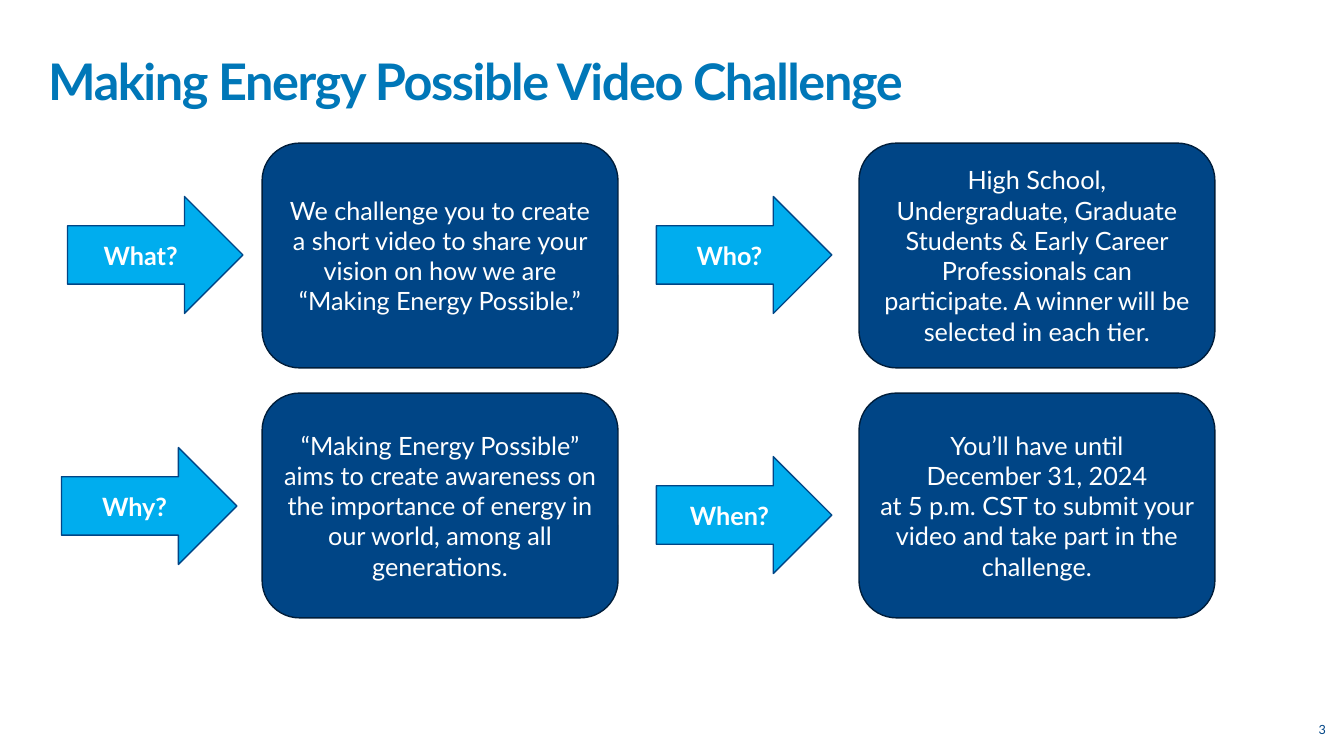
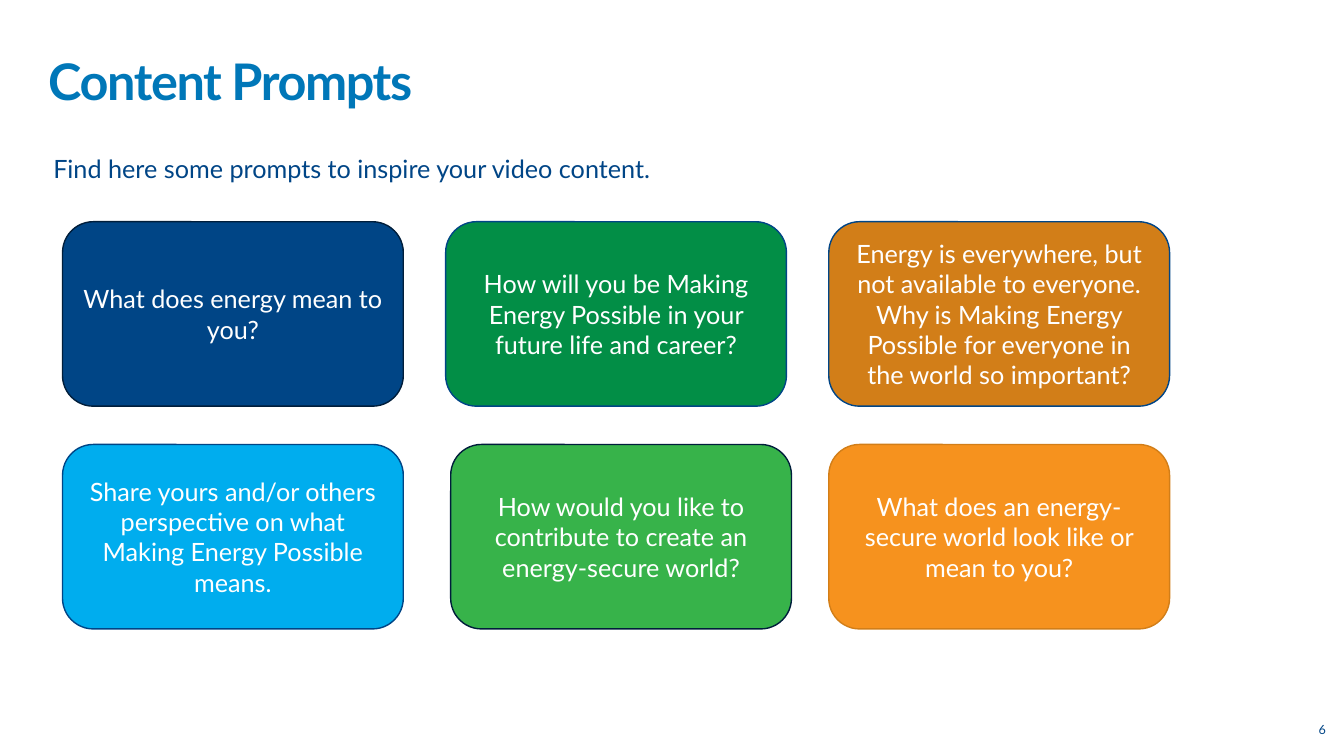
from dataclasses import dataclass

from pptx import Presentation
from pptx.dml.color import RGBColor
from pptx.enum.shapes import MSO_SHAPE
from pptx.enum.text import MSO_ANCHOR, PP_ALIGN
from pptx.slide import Slide
from pptx.text.text import TextFrame
from pptx.util import Emu, Pt

EMU_PER_PX = 9144  # 100 px to the inch
FONT = "Lato"
COLORS = {
    "white": "FFFFFF",
    "title": "0077B8",
    "navy": "004586",
    "midnight": "001E3B",
    "sky": "00ADEE",
    "forest": "028E46",
    "leaf": "37B34A",
    "amber": "D27E18",
    "orange": "F6921E",
}


@dataclass(frozen=True)
class Box:
    left: int
    top: int
    width: int
    height: int

    def emu(self) -> list[Emu]:
        return [Emu(v * EMU_PER_PX) for v in (self.left, self.top, self.width, self.height)]


@dataclass(frozen=True)
class TextStyle:
    size: int
    color: str
    bold: bool = False
    align: PP_ALIGN = PP_ALIGN.LEFT
    anchor: MSO_ANCHOR = MSO_ANCHOR.MIDDLE
    line_spacing: float = 1.0
    tracking: int = 0  # hundredths of a point


@dataclass(frozen=True)
class Question:
    """An arrow with a question word, and the card that answers it."""
    word: str
    answer: str
    arrow_left: int
    arrow_top: int
    card_left: int
    card_top: int


@dataclass(frozen=True)
class Prompt:
    text: str
    fill: str
    outline: str
    shift: int = 0


TITLE_BOX = Box(38, 41, 1217, 85)
NUMBER_BOX = Box(1278, 704, 47, 40)
INTRO_BOX = Box(43, 147, 812, 40)

TITLE_STYLE = TextStyle(36, "title", bold=True, line_spacing=0.9, tracking=-100)
NUMBER_STYLE = TextStyle(9, "navy", align=PP_ALIGN.RIGHT)
INTRO_STYLE = TextStyle(18, "navy", anchor=MSO_ANCHOR.TOP)
CARD_STYLE = TextStyle(18, "white", align=PP_ALIGN.CENTER)
ARROW_STYLE = TextStyle(18, "white", bold=True, align=PP_ALIGN.CENTER)

ARROW_SIZE = (174, 116)
ANSWER_SIZE = (353, 223)
PROMPT_SIZE = (338, 183)
PROMPT_ORIGIN = (62, 220)
PROMPT_PITCH = (380, 221)
PROMPT_COLUMNS = 3

QUESTIONS = [
    Question("What?", "We challenge you to create a short video to share your vision "
             "on how we are “Making Energy Possible.”", 67, 195, 260, 142),
    Question("Who?", "High School, Undergraduate, Graduate Students & Early Career "
             "Professionals can participate. A winner will be selected in each tier.",
             651, 195, 852, 142),
    Question("Why?", "“Making Energy Possible” aims to create awareness on the importance "
             "of energy in our world, among all generations.", 61, 444, 260, 390),
    Question("When?", "You’ll have until\nDecember 31, 2024\nat 5 p.m. CST to submit your "
             "video and take part in the challenge.", 651, 453, 852, 390),
]

PROMPTS = [
    Prompt("What does energy mean to you?", "navy", "midnight"),
    Prompt("How will you be Making Energy Possible in your future life and career?",
           "forest", "navy"),
    Prompt("Energy is everywhere, but not available to everyone. Why is Making Energy "
           "Possible for everyone in the world so important?", "amber", "navy"),
    Prompt("Share yours and/or others perspective on what Making Energy Possible means.",
           "sky", "navy"),
    Prompt("How would you like to contribute to create an energy-secure world?",
           "leaf", "midnight", shift=5),
    Prompt("What does an energy-secure world look like or mean to you?", "orange", "amber"),
]


def rgb(name: str) -> RGBColor:
    return RGBColor.from_string(COLORS[name])


def write(frame: TextFrame, text: str, style: TextStyle) -> None:
    frame.word_wrap = True
    frame.vertical_anchor = style.anchor
    paragraph = frame.paragraphs[0]
    paragraph.alignment = style.align
    paragraph.line_spacing = style.line_spacing
    for index, line in enumerate(text.split("\n")):
        if index:
            paragraph.add_line_break()
        run = paragraph.add_run()
        run.text = line
        run.font.name = FONT
        run.font.size = Pt(style.size)
        run.font.bold = style.bold
        run.font.color.rgb = rgb(style.color)
        if style.tracking:
            run.font._element.set("spc", str(style.tracking))


def add_label(slide: Slide, box: Box, text: str, style: TextStyle) -> None:
    write(slide.shapes.add_textbox(*box.emu()).text_frame, text, style)


def add_block(slide: Slide, preset: MSO_SHAPE, box: Box, text: str,
              style: TextStyle, fill: str, outline: str) -> None:
    block = slide.shapes.add_shape(preset, *box.emu())
    block.shadow.inherit = False
    block.fill.solid()
    block.fill.fore_color.rgb = rgb(fill)
    block.line.color.rgb = rgb(outline)
    block.line.width = Pt(1)
    write(block.text_frame, text, style)


def add_titled_slide(deck: Presentation, title: str, number: int) -> Slide:
    slide = deck.slides.add_slide(deck.slide_layouts[6])
    slide.background.fill.solid()
    slide.background.fill.fore_color.rgb = rgb("white")
    add_label(slide, TITLE_BOX, title, TITLE_STYLE)
    add_label(slide, NUMBER_BOX, str(number), NUMBER_STYLE)
    return slide


def build_challenge(deck: Presentation) -> None:
    slide = add_titled_slide(deck, "Making Energy Possible Video Challenge", 3)
    for question in QUESTIONS:
        arrow = Box(question.arrow_left, question.arrow_top, *ARROW_SIZE)
        card = Box(question.card_left, question.card_top, *ANSWER_SIZE)
        add_block(slide, MSO_SHAPE.RIGHT_ARROW, arrow, question.word,
                  ARROW_STYLE, "sky", "navy")
        add_block(slide, MSO_SHAPE.ROUNDED_RECTANGLE, card, question.answer,
                  CARD_STYLE, "navy", "midnight")


def build_prompts(deck: Presentation) -> None:
    slide = add_titled_slide(deck, "Content Prompts", 6)
    add_label(slide, INTRO_BOX, "Find here some prompts to inspire your video content.",
              INTRO_STYLE)
    # Grid of prompt cards
    for index, prompt in enumerate(PROMPTS):
        row, column = divmod(index, PROMPT_COLUMNS)
        card = Box(PROMPT_ORIGIN[0] + column * PROMPT_PITCH[0] + prompt.shift,
                   PROMPT_ORIGIN[1] + row * PROMPT_PITCH[1], *PROMPT_SIZE)
        add_block(slide, MSO_SHAPE.ROUNDED_RECTANGLE, card, prompt.text,
                  CARD_STYLE, prompt.fill, prompt.outline)


def main() -> None:
    deck = Presentation()
    deck.slide_width = Emu(1333 * EMU_PER_PX)
    deck.slide_height = Emu(750 * EMU_PER_PX)
    build_challenge(deck)
    build_prompts(deck)
    deck.save("out.pptx")


if __name__ == "__main__":
    main()
